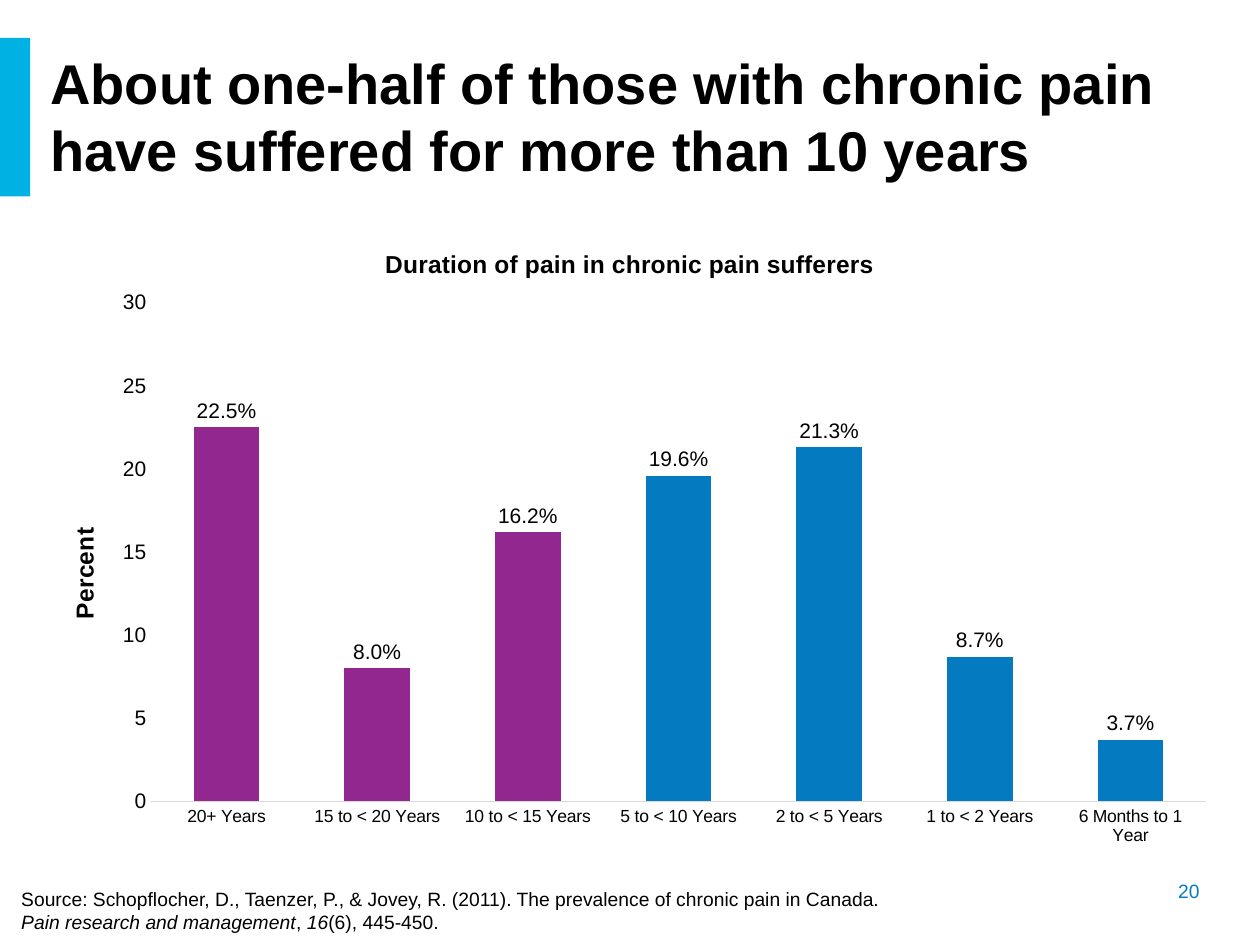
from lxml.etree import SubElement
from pptx import Presentation
from pptx.chart.data import CategoryChartData
from pptx.dml.color import RGBColor
from pptx.enum.chart import XL_CHART_TYPE, XL_LABEL_POSITION, XL_TICK_MARK
from pptx.enum.shapes import MSO_SHAPE
from pptx.enum.text import MSO_ANCHOR, PP_ALIGN
from pptx.oxml.ns import qn
from pptx.util import Inches, Pt

COLORS = {
    "black": "000000",
    "cyan": "00B2E3",
    "blue": "047BC1",
    "purple": "92278F",
    "gray": "D9D9D9",
}
PAIN = {
    "20+ Years": 22.5,
    "15 to < 20 Years": 8,
    "10 to < 15 Years": 16.2,
    "5 to < 10 Years": 19.6,
    "2 to < 5 Years": 21.3,
    "1 to < 2 Years": 8.7,
    "6 Months to 1 Year": 3.7,
}
LONG = 3


def color(name):
    return RGBColor.from_string(COLORS[name])


def style(font, size, tint="black", bold=False, italic=False):
    font.name = "Arial"
    font.size = Pt(size)
    font.bold = bold
    font.italic = italic
    font.color.rgb = color(tint)


def paint(fill, tint):
    fill.solid()
    fill.fore_color.rgb = color(tint)


def add_text(slide, text, box, size=11, tint="black", bold=False,
             align=PP_ALIGN.LEFT, anchor=MSO_ANCHOR.TOP):
    frame = slide.shapes.add_textbox(*map(Inches, box)).text_frame
    frame.word_wrap = True
    frame.vertical_anchor = anchor
    para = frame.paragraphs[0]
    para.alignment = align
    parts = [(text, False)] if isinstance(text, str) else text
    for words, italic in parts:
        if words == "\n":
            para.add_line_break()
            continue
        run = para.add_run()
        run.text = words
        style(run.font, size, tint, bold, italic)


def add_bar(slide, box, tint):
    bar = slide.shapes.add_shape(MSO_SHAPE.RECTANGLE, *map(Inches, box))
    bar.shadow.inherit = False
    paint(bar.fill, tint)
    bar.line.fill.background()


def place(node, **spots):
    for old in node.findall(qn("c:layout")):
        node.remove(old)
    layout = SubElement(node, qn("c:layout"))
    manual = SubElement(layout, qn("c:manualLayout"))
    if "w" in spots:
        SubElement(manual, qn("c:layoutTarget")).set("val", "inner")
    for key in ("xMode", "yMode"):
        SubElement(manual, qn("c:" + key)).set("val", "edge")
    for key, val in spots.items():
        SubElement(manual, qn("c:" + key)).set("val", str(val))
    node.remove(layout)
    text = node.find(qn("c:tx"))
    node.insert(0 if text is None else 1, layout)


def add_title(owner, text, x, y):
    title = owner.chart_title if hasattr(owner, "chart_title") else owner.axis_title
    run = title.text_frame.paragraphs[0].add_run()
    run.text = text
    style(run.font, 14, bold=True)
    place(title._element, x=x, y=y)


def add_chart(slide, box):
    data = CategoryChartData()
    data.categories = list(PAIN)
    data.add_series("Series 1", list(PAIN.values()))
    chart = slide.shapes.add_chart(
        XL_CHART_TYPE.COLUMN_CLUSTERED, *map(Inches, box), data).chart
    style(chart.font, 10)
    chart.has_legend = False
    add_title(chart, "Duration of pain in chronic pain sufferers", 0.29, 0.04)
    style_axes(chart)
    style_bars(chart.plots[0])
    place(chart._chartSpace.chart.plotArea, x=0.098, y=0.132, w=0.882, h=0.776)


def style_axes(chart):
    cats, vals = chart.category_axis, chart.value_axis
    for axis, size in ((cats, 10), (vals, 12)):
        axis.has_major_gridlines = False
        axis.major_tick_mark = XL_TICK_MARK.NONE
        axis.minor_tick_mark = XL_TICK_MARK.NONE
        style(axis.tick_labels.font, size)
    cats.format.line.color.rgb = color("gray")
    cats.format.line.width = Pt(0.75)
    vals.format.line.fill.background()
    vals.minimum_scale = 0
    vals.maximum_scale = 30
    vals.major_unit = 5
    add_title(vals, "Percent", 0.025, 0.475)


def style_bars(plot):
    plot.vary_by_categories = False
    plot.gap_width = 129
    plot.overlap = -27
    bars = plot.series[0]
    paint(bars.format.fill, "blue")
    for i in range(LONG):
        paint(bars.points[i].format.fill, "purple")
    labels = bars.data_labels
    labels.show_value = True
    labels.position = XL_LABEL_POSITION.OUTSIDE_END
    labels.number_format = "0.0\\%"
    labels.number_format_is_linked = False
    style(labels.font, 12)


def main():
    deck = Presentation()
    deck.slide_width = Inches(10)
    deck.slide_height = Inches(7.5)
    slide = deck.slides.add_slide(deck.slide_layouts[6])
    add_text(slide, "20", (8.45, 6.93, 1.17, 0.29), tint="blue",
             align=PP_ALIGN.RIGHT)
    add_bar(slide, (0, 0.3, 0.24, 1.26), "cyan")
    add_text(slide, "About one-half of those with chronic pain "
             "have suffered for more than 10 years", (0.3, 0.28, 9.02, 1.28),
             size=32, bold=True, anchor=MSO_ANCHOR.MIDDLE)
    source = [
        ("Source: Schopflocher, D., Taenzer, P., & Jovey, R. (2011). "
         "The prevalence of chronic pain in Canada. ", False),
        ("\n", False),
        ("Pain research and management", True),
        (", ", False),
        ("16", True),
        ("(6), 445-450.", False),
    ]
    add_text(slide, source, (0.07, 6.99, 9.49, 0.47))
    add_chart(slide, (0.27, 1.73, 9.49, 5.1))
    deck.save("out.pptx")


if __name__ == "__main__":
    main()
